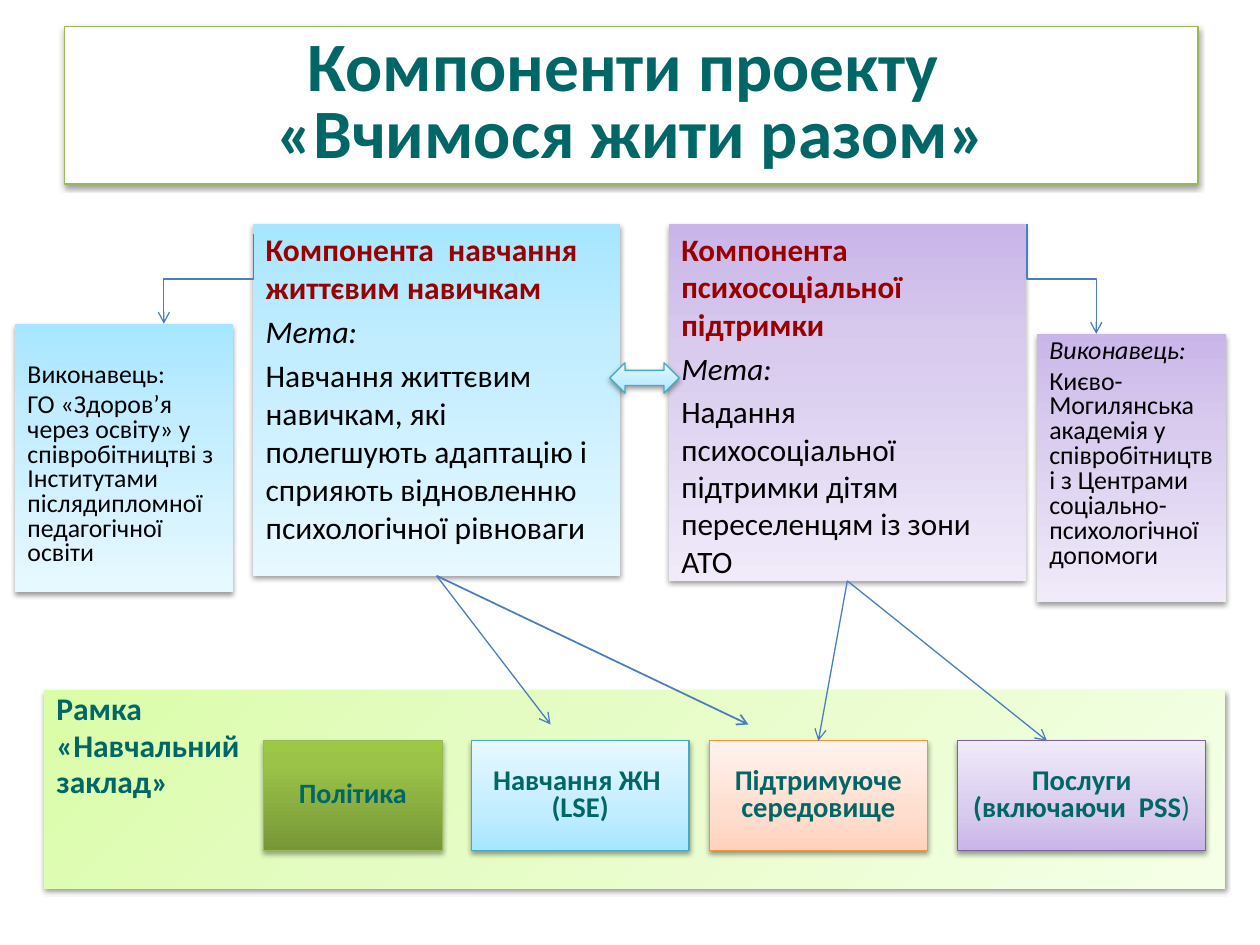
import pptx
import pptx.util
import pptx.dml.color
import pptx.enum.shapes
import pptx.enum.text
import pptx.oxml.ns
import lxml.etree

Inches, Pt = pptx.util.Inches, pptx.util.Pt
RGB = pptx.dml.color.RGBColor
SHAPE = pptx.enum.shapes.MSO_SHAPE
LINK = pptx.enum.shapes.MSO_CONNECTOR
ALIGN, ANCHOR = pptx.enum.text.PP_ALIGN, pptx.enum.text.MSO_ANCHOR
qn = pptx.oxml.ns.qn

THEME = {
    "font": "Calibri",
    "ink": "000000", "teal": "006666", "red": "990000", "wire": "4B7EBC",
    "white": "FFFFFF", "edge": {"green": "98B955", "blue": "46AAC5",
                                "peach": "F69240", "lilac": "7D60A0"},
    "fade": {
        "blue": [(0, "A7E6FF"), (35, "C1EDFF"), (100, "E7F8FF")],
        "lilac": [(0, "C9B5E8"), (35, "D8CBEE"), (100, "F0EAF9")],
        "lime": [(0, "DAFDA7"), (35, "E4FCC2"), (100, "F5FFE7")],
        "peach": [(0, "FFD2BD"), (35, "FFDED0"), (100, "FFF2ED")],
        "green": [(0, "779737"), (80, "9BC348"), (100, "9DC746")],
    },
    "size": {"title": 39.6, "part": 18, "help": 17.8, "frame": 18,
             "left": 14.7, "right": 14.8, "tile": 16.3, "rule": 16},
}

# Content: each paragraph is a list of (text, style) runs
TITLE = [[("Компоненти проекту \v«Вчимося жити разом»", "teal")]]
SKILLS = [[("Компонента  навчання життєвим навичкам", "red")],
          [("Мета:", "slant")],
          [("Навчання життєвим навичкам, які полегшують адаптацію і "
            "сприяють відновленню психологічної рівноваги", "plain")]]
SUPPORT = [[("Компонента  психосоціальної підтримки", "red")],
           [("Мета:", "slant")],
           [("Надання психосоціальної підтримки дітям переселенцям "
             "із зони АТО", "plain")]]
FRAME = [[(text, "teal")] for text in ("Рамка", "«Навчальний", "заклад»")]
LEFT = [[("Виконавець:", "plain")],
        [("ГО «Здоров’я через освіту» у співробітництві з Інститутами "
          "післядипломної педагогічної освіти", "plain")]]
RIGHT = [[("Виконавець:", "slant")],
         [("Києво-Могилянська академія у співробітництві з Центрами "
           "соціально-психологічної допомоги", "plain")]]
# Tiles: left, width, colour, size, text runs
TILES = [
    (2.09, 1.42, "green", "rule", [("Політика", "teal")]),
    (3.74, 1.73, "blue", "tile", [("Навчання ЖН  (LSE)", "teal")]),
    (5.63, 1.73, "peach", "tile", [("Підтримуюче середовище", "teal")]),
    (7.6, 1.97, "lilac", "tile", [("Послуги (включаючи  PSS", "teal"),
                                  (")", "thin")]),
]
TILE_TOP, TILE_HIGH = 5.88, 0.87

# Style: colour, bold, italic
STYLES = {"teal": ("teal", True, False), "red": ("red", True, False),
          "plain": ("ink", False, False), "slant": ("ink", False, True),
          "thin": ("teal", False, False)}


def add_node(root, tag, **attrs):
    return lxml.etree.SubElement(root, qn(tag), attrs)


def paint(shape, fade, angle):
    shape.fill.gradient()
    shape.fill.gradient_angle = 360 - angle
    stops = shape._element.spPr.find(qn("a:gradFill")).find(qn("a:gsLst"))
    for stop in list(stops):
        stops.remove(stop)
    for place, tone in THEME["fade"][fade]:
        stop = add_node(stops, "a:gs", pos=str(place * 1000))
        add_node(stop, "a:srgbClr", val=tone)


def shade(shape, alpha=38):
    shape.shadow.inherit = False
    root = shape._element.spPr.find(qn("a:effectLst"))
    cast = add_node(root, "a:outerShdw", blurRad=str(Pt(3.1)),
                    dist=str(Pt(1.6)), dir="5400000", rotWithShape="0")
    tone = add_node(cast, "a:srgbClr", val="000000")
    add_node(tone, "a:alpha", val=str(alpha * 1000))


def write(shape, paras, size, tight, align, anchor, inset):
    frame = shape.text_frame
    frame.word_wrap = True
    frame.vertical_anchor = anchor
    frame.margin_top = Inches(inset)
    points = THEME["size"][size]
    for i, runs in enumerate(paras):
        para = frame.paragraphs[0] if i == 0 else frame.add_paragraph()
        para.alignment = align
        para.line_spacing = 0.8 if tight else 1.0
        para.space_before = Pt(0 if size == "title" else round(points * 0.2, 1))
        para.text = runs[0][0]
        for text, _ in runs[1:]:
            para.add_run().text = text
        looks = [look for _, look in runs]
        for j, run in enumerate(para.runs):
            tone, bold, slant = STYLES[looks[min(j, len(looks) - 1)]]
            font = run.font
            font.name, font.size = THEME["font"], Pt(points)
            font.bold, font.italic = bold, slant
            font.color.rgb = RGB.from_string(THEME[tone])


def add_box(slide, area, fade, angle=90, edge=None, paras=(), size=None,
            tight=True, mid=False, inset=0.05, kind=SHAPE.RECTANGLE):
    shape = slide.shapes.add_shape(kind, *map(Inches, area))
    if fade:
        paint(shape, fade, angle)
    else:
        shape.fill.solid()
        shape.fill.fore_color.rgb = RGB.from_string(THEME["white"])
    if edge:
        shape.line.color.rgb = RGB.from_string(THEME["edge"][edge])
        shape.line.width = Pt(0.75)
    else:
        shape.line.fill.background()
    shade(shape, 35 if fade == "green" else 38)
    if paras:
        write(shape, paras, size, tight, ALIGN.CENTER if mid else ALIGN.LEFT,
              ANCHOR.MIDDLE if mid else ANCHOR.TOP, inset)
    return shape


def add_wire(slide, kind, start, end, width=0.75):
    wire = slide.shapes.add_connector(kind, *map(Inches, start + end))
    wire.line.color.rgb = RGB.from_string(THEME["wire"])
    wire.line.width = Pt(width)
    add_node(wire.line._get_or_add_ln(), "a:tailEnd", type="arrow")
    add_node(wire._element.spPr, "a:effectLst")
    return wire


def add_bend(slide, start, end):
    """Elbow that leaves and arrives vertically: a turned elbow connector."""
    (x0, y0), (x1, y1) = start, end
    mid_x, mid_y = (x0 + x1) / 2, (y0 + y1) / 2
    half_w, half_h = (y1 - y0) / 2, abs(x1 - x0) / 2
    side = 1 if x1 > x0 else -1
    wire = add_wire(slide, LINK.ELBOW,
                    (mid_x + side * half_w, mid_y - half_h),
                    (mid_x - side * half_w, mid_y + half_h))
    turn = 270 if side > 0 else 90
    wire._element.spPr.find(qn("a:xfrm")).set("rot", str(turn * 60000))


def main():
    deck = pptx.Presentation()
    deck.slide_width, deck.slide_height = Inches(10), Inches(7.5)
    slide = deck.slides.add_slide(deck.slide_layouts[6])

    # Title and main boxes
    add_box(slide, (0.51, 0.21, 9, 1.25), None, edge="green", paras=TITLE,
            size="title", mid=True)
    support = add_box(slide, (5.31, 1.78, 2.83, 2.83), "lilac",
                      paras=SUPPORT, size="help", tight=False)
    add_box(slide, (0.35, 5.48, 9.37, 1.57), "lime", 45, paras=FRAME,
            size="frame")
    skills = add_box(slide, (2.01, 1.78, 2.91, 2.79), "blue",
                     paras=SKILLS, size="part", tight=False)

    # Partners on both sides
    add_box(slide, (0.12, 2.57, 1.73, 2.13), "blue", paras=LEFT,
            size="left", inset=0.32)
    add_box(slide, (8.23, 2.65, 1.5, 2.13), "lilac", paras=RIGHT,
            size="right")

    # Tiles in the frame
    tiles = [add_box(slide, (left, TILE_TOP, wide, TILE_HIGH), tone, 270,
                     tone, [runs], size, mid=True)
             for left, wide, tone, size, runs in TILES]

    # Arrows from the main boxes down to the tiles
    for box, start, end, width, goal in (
            (skills, (3.46, 4.57), (4.37, 5.75), 0.75, None),
            (skills, (3.46, 4.57), (5.94, 5.75), 1, None),
            (support, (6.73, 4.61), (6.5, 5.88), 0.75, tiles[2]),
            (support, (6.73, 4.61), (8.31, 5.88), 0.75, None)):
        wire = add_wire(slide, LINK.STRAIGHT, start, end, width)
        wire.begin_connect(box, 2)
        if goal:
            wire.end_connect(goal, 0)

    # Bent arrows to the partners, double arrow between the main boxes
    add_bend(slide, (8.15, 1.78), (8.7, 2.65))
    add_bend(slide, (2.01, 1.86), (1.3, 2.57))
    add_box(slide, (4.84, 2.88, 0.55, 0.24), "blue", 270, "blue",
            kind=SHAPE.LEFT_RIGHT_ARROW)

    deck.save("out.pptx")


if __name__ == "__main__":
    main()
